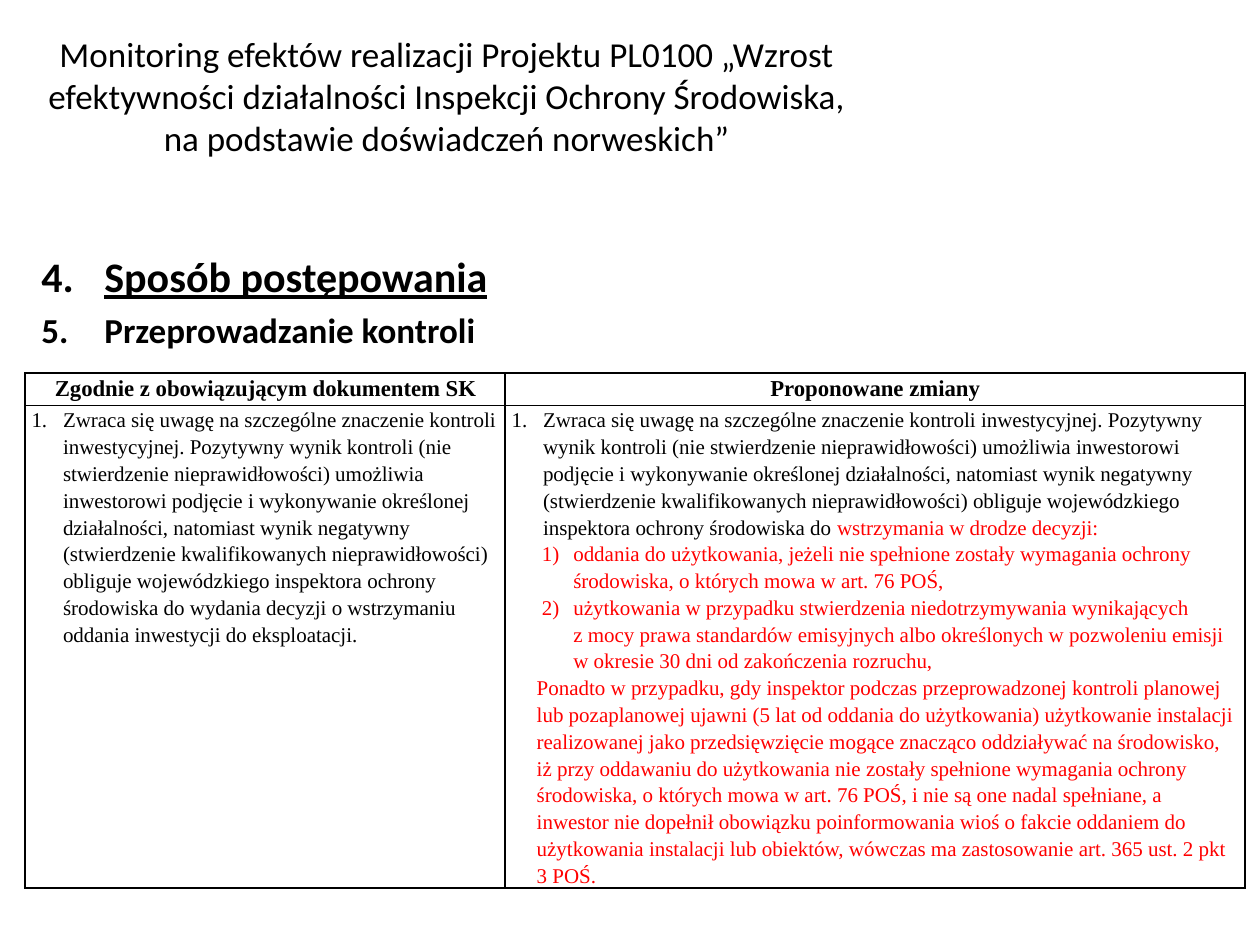
from dataclasses import dataclass

from lxml import etree
from pptx import Presentation
from pptx.dml.color import RGBColor
from pptx.enum.text import MSO_ANCHOR, MSO_AUTO_SIZE, PP_ALIGN
from pptx.oxml.ns import qn
from pptx.util import Inches, Pt

BLACK = RGBColor(0, 0, 0)
RED = RGBColor(255, 0, 0)
TOP = MSO_ANCHOR.TOP
FIXED = MSO_AUTO_SIZE.NONE
CENTER = PP_ALIGN.CENTER
LEFT = PP_ALIGN.LEFT
SANS = "Calibri"
SERIF = "Times New Roman"
DOT = "arabicPeriod"
PAREN = "arabicParenR"


@dataclass
class Bit:
    text: str
    color: RGBColor = BLACK
    size: float = 12
    font: str = SERIF
    bold: bool = False
    line: bool = False


@dataclass
class Para:
    bits: list[Bit]
    left: float = 0
    hang: float = 0
    mark: str = ""
    start: int = 1
    align: PP_ALIGN = LEFT
    space: float = 1
    before: float = 0


def style(font, bit: Bit) -> None:
    font.name = bit.font
    font.size = Pt(bit.size)
    font.bold = bit.bold
    font.underline = bit.line
    font.color.rgb = bit.color


def write(frame, paras: list[Para]) -> None:
    for i, item in enumerate(paras):
        para = frame.add_paragraph() if i else frame.paragraphs[0]
        props = para._p.get_or_add_pPr()
        props.set("marL", str(Inches(item.left)))
        props.set("indent", str(-Inches(item.hang)))
        if item.mark:
            mark = etree.SubElement(props, qn("a:buAutoNum"), type=item.mark)
            if item.start > 1:
                mark.set("startAt", str(item.start))
        para.alignment = item.align
        para.line_spacing = item.space
        para.space_before = Pt(item.before)
        for bit in item.bits:
            for j, text in enumerate(bit.text.split("\n")):
                if j:
                    para.add_line_break()
                run = para.add_run()
                run.text = text
                style(run.font, bit)
        style(para.font, item.bits[-1])


def border(cell) -> None:
    props = cell._tc.get_or_add_tcPr()
    for i, side in enumerate(("lnL", "lnR", "lnT", "lnB")):
        edge = etree.Element(qn(f"a:{side}"), w=str(Pt(1)))
        fill = etree.SubElement(edge, qn("a:solidFill"))
        etree.SubElement(fill, qn("a:srgbClr"), val=str(BLACK))
        props.insert(i, edge)


def head(text: str) -> list[Para]:
    return [Para([Bit(text, size=13, bold=True)], align=CENTER, space=1.15)]


def point(*bits: Bit, left: float = 0.25, hang: float = 0.25, mark: str = DOT) -> Para:
    return Para(list(bits), left, hang, mark, space=1.15)


def sub(text: str) -> Para:
    return point(Bit(text, RED), left=0.49, mark=PAREN)


TITLE = (
    "Monitoring efektów realizacji Projektu PL0100 „Wzrost efektywności działalności "
    "Inspekcji Ochrony Środowiska, na podstawie doświadczeń norweskich”"
)
SHARED = (
    "Zwraca się uwagę na szczególne znaczenie kontroli inwestycyjnej. Pozytywny wynik "
    "kontroli (nie stwierdzenie nieprawidłowości) umożliwia inwestorowi podjęcie i "
    "wykonywanie określonej działalności, natomiast wynik negatywny (stwierdzenie "
    "kwalifikowanych nieprawidłowości) obliguje wojewódzkiego inspektora ochrony "
    "środowiska do "
)
USE = (
    "użytkowania w przypadku stwierdzenia niedotrzymywania wynikających \n"
    "z mocy prawa standardów emisyjnych albo określonych w pozwoleniu emisji \n"
    "w okresie 30 dni od zakończenia rozruchu,"
)
ALSO = (
    "Ponadto w przypadku, gdy inspektor podczas przeprowadzonej kontroli planowej lub "
    "pozaplanowej ujawni (5 lat od oddania do użytkowania) użytkowanie instalacji "
    "realizowanej jako przedsięwzięcie mogące znacząco oddziaływać na środowisko, \n"
    "iż przy oddawaniu do użytkowania nie zostały spełnione wymagania ochrony środowiska, "
    "o których mowa w art. 76 POŚ, i nie są one nadal spełniane, a inwestor nie dopełnił "
    "obowiązku poinformowania wioś o fakcie oddaniem do użytkowania instalacji lub "
    "obiektów, wówczas ma zastosowanie art. 365 ust. 2 pkt 3 POŚ."
)
ROWS = [
    [head("Zgodnie z obowiązującym dokumentem SK"), head("Proponowane zmiany")],
    [
        [point(Bit(SHARED + "wydania decyzji o wstrzymaniu oddania inwestycji do eksploatacji."))],
        [
            point(Bit(SHARED), Bit("wstrzymania w drodze decyzji:", RED)),
            sub("oddania do użytkowania, jeżeli nie spełnione zostały wymagania ochrony "
                "środowiska, o których mowa w art. 76 POŚ,"),
            sub(USE),
            point(Bit(ALSO, RED), left=0.2, hang=0, mark=""),
        ],
    ],
]
HEADS = [
    Para([Bit("Sposób postępowania", BLACK, 24, SANS, True, True)], 0.5, 0.5, DOT, 4),
    Para([Bit("Przeprowadzanie kontroli", BLACK, 20, SANS, True)], 0.5, 0.5, DOT, 4, before=4),
]


def main() -> None:
    deck = Presentation()
    deck.slide_width, deck.slide_height = Inches(10), Inches(7.5)
    slide = deck.slides.add_slide(deck.slide_layouts[5])

    title = slide.shapes.title
    title.left, title.top = Inches(0.12), Inches(0.21)
    title.width, title.height = Inches(6.85), Inches(1.42)
    box = slide.shapes.add_textbox(Inches(0.23), Inches(1.94), Inches(9.29), Inches(0.74))
    texts = [Para([Bit(TITLE, size=20, font=SANS)], align=CENTER)]
    for shape, paras in ((title, texts), (box, HEADS)):
        frame = shape.text_frame
        frame.word_wrap = True
        frame.auto_size = FIXED
        frame.vertical_anchor = TOP
        write(frame, paras)

    grid = slide.shapes.add_table(
        2, 2, Inches(0.2), Inches(2.96), Inches(9.68), Inches(2.68)).table
    for col, width in zip(grid.columns, (3.81, 5.87)):
        col.width = Inches(width)
    for row, height, items in zip(grid.rows, (0.26, 2.42), ROWS):
        row.height = Inches(height)
        for cell, paras in zip(row.cells, items):
            cell.margin_left = cell.margin_right = Inches(0.05)
            cell.margin_top = cell.margin_bottom = 0
            cell.vertical_anchor = TOP
            cell.fill.background()
            border(cell)
            write(cell.text_frame, paras)

    deck.save("out.pptx")


if __name__ == "__main__":
    main()
